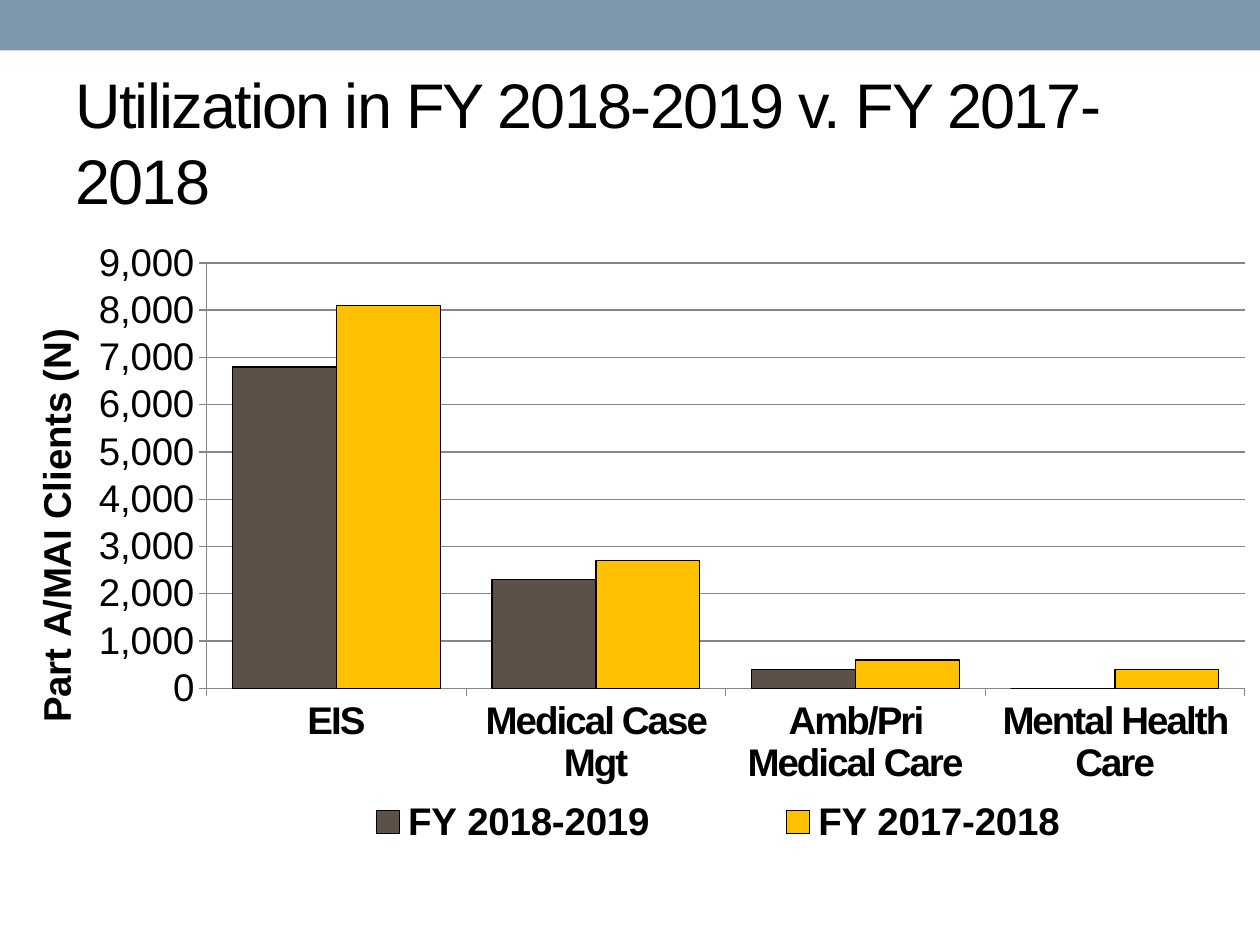
from lxml.etree import SubElement
from pptx import Presentation
from pptx.chart.data import CategoryChartData
from pptx.dml.color import RGBColor
from pptx.enum.chart import XL_CHART_TYPE as ChartType
from pptx.enum.chart import XL_LEGEND_POSITION as LegendPosition
from pptx.enum.chart import XL_TICK_MARK as TickMark
from pptx.enum.shapes import MSO_SHAPE as Preset
from pptx.enum.text import MSO_ANCHOR as Anchor
from pptx.oxml.ns import qn
from pptx.util import Inches, Pt

WIDTH, HEIGHT = Inches(10), Inches(7.5)
FONT = "Arial"
COLORS = {"band": "7E97AD", "text": "000000", "grid": "878787",
          "current": "5C5048", "previous": "FFC000"}
CATEGORIES = ["EIS", "Medical Case Mgt", "Amb/Pri Medical Care", "Mental Health Care"]
SERIES = [("FY 2018-2019", [6800, 2300, 400, 0], "current"),
          ("FY 2017-2018", [8100, 2700, 600, 400], "previous")]


def color(name):
    return RGBColor.from_string(COLORS[name])


def style_font(font, size, bold=False):
    font.name, font.size, font.bold = FONT, Pt(size), bold
    font.color.rgb = color("text")


def style_line(line, name):
    line.color.rgb = color(name)
    line.width = Pt(0.75)


def set_layout(parent, position, **shares):
    """Place a chart part by shares of the chart's size."""
    for old in parent.findall(qn("c:layout")):
        parent.remove(old)
    layout = SubElement(parent, qn("c:layout"))
    manual = SubElement(layout, qn("c:manualLayout"))
    if "w" in shares and parent.tag == qn("c:plotArea"):
        SubElement(manual, qn("c:layoutTarget")).set("val", "inner")
    for mode in ("xMode", "yMode"):
        SubElement(manual, qn(f"c:{mode}")).set("val", "edge")
    for key, share in shares.items():
        SubElement(manual, qn(f"c:{key}")).set("val", str(share))
    parent.insert(position, layout)


def add_band(page):
    band = page.shapes.add_shape(Preset.RECTANGLE, 0, 0, WIDTH, Inches(0.4))
    band.shadow.inherit = False
    band.fill.solid()
    band.fill.fore_color.rgb = color("band")
    band.line.fill.background()


def add_title(page, text):
    box = page.shapes.add_textbox(Inches(0.5), Inches(0.58), Inches(9), Inches(1.08))
    frame = box.text_frame
    frame.word_wrap = True
    frame.vertical_anchor = Anchor.MIDDLE
    frame.text = text
    span = frame.paragraphs[0].runs[0]
    style_font(span.font, 36)
    span.font._element.set("spc", "-100")


def style_axes(chart):
    for axis in (chart.category_axis, chart.value_axis):
        axis.major_tick_mark = TickMark.OUTSIDE
        axis.minor_tick_mark = TickMark.NONE
        style_line(axis.format.line, "grid")

    # Category labels are bold and slightly tightened
    labels = chart.category_axis.tick_labels
    style_font(labels.font, 22, bold=True)
    labels.font._element.set("spc", "-100")

    # Value scale, gridlines and axis title
    values = chart.value_axis
    values.minimum_scale, values.maximum_scale, values.major_unit = 0, 9000, 1000
    style_font(values.tick_labels.font, 22)
    values.tick_labels.number_format = "#,##0"
    values.tick_labels.number_format_is_linked = False
    values.has_major_gridlines = True
    style_line(values.major_gridlines.format.line, "grid")
    title = values.axis_title
    title.text_frame.text = "Part A/MAI Clients (N)"
    style_font(title.text_frame.paragraphs[0].runs[0].font, 22, bold=True)
    title.text_frame._txBody.bodyPr.set("rot", "-5400000")
    title.text_frame._txBody.bodyPr.set("vert", "horz")
    set_layout(title._element, 1, x=0.02, y=0.13)


def add_chart(page):
    data = CategoryChartData(number_format="#,##0")
    data.categories = CATEGORIES
    for name, values, _ in SERIES:
        data.add_series(name, values)
    chart = page.shapes.add_chart(ChartType.COLUMN_CLUSTERED, 0, Inches(1.92),
                                  WIDTH, Inches(4.9), data).chart
    chart.has_title = False
    style_font(chart.font, 22)
    style_axes(chart)

    # Columns
    plot = chart.plots[0]
    plot.gap_width, plot.overlap, plot.vary_by_categories = 50, 0, False
    for series, (_, _, fill) in zip(plot.series, SERIES):
        series.format.fill.solid()
        series.format.fill.fore_color.rgb = color(fill)
        style_line(series.format.line, "text")
    plot_area = chart._chartSpace.chart.plotArea
    set_layout(plot_area, 0, x=0.164, y=0.033, w=0.824, h=0.69)

    # Legend
    chart.has_legend = True
    legend = chart.legend
    legend.position = LegendPosition.BOTTOM
    legend.include_in_layout = False
    style_font(legend.font, 22, bold=True)
    set_layout(legend._element, 1, x=0.2, y=0.89, w=0.74, h=0.1)


def main():
    deck = Presentation()
    deck.slide_width, deck.slide_height = WIDTH, HEIGHT
    page = deck.slides.add_slide(deck.slide_layouts[6])
    add_band(page)
    add_title(page, "Utilization in FY 2018-2019 v. FY 2017-2018")
    add_chart(page)
    deck.save("out.pptx")


if __name__ == "__main__":
    main()
